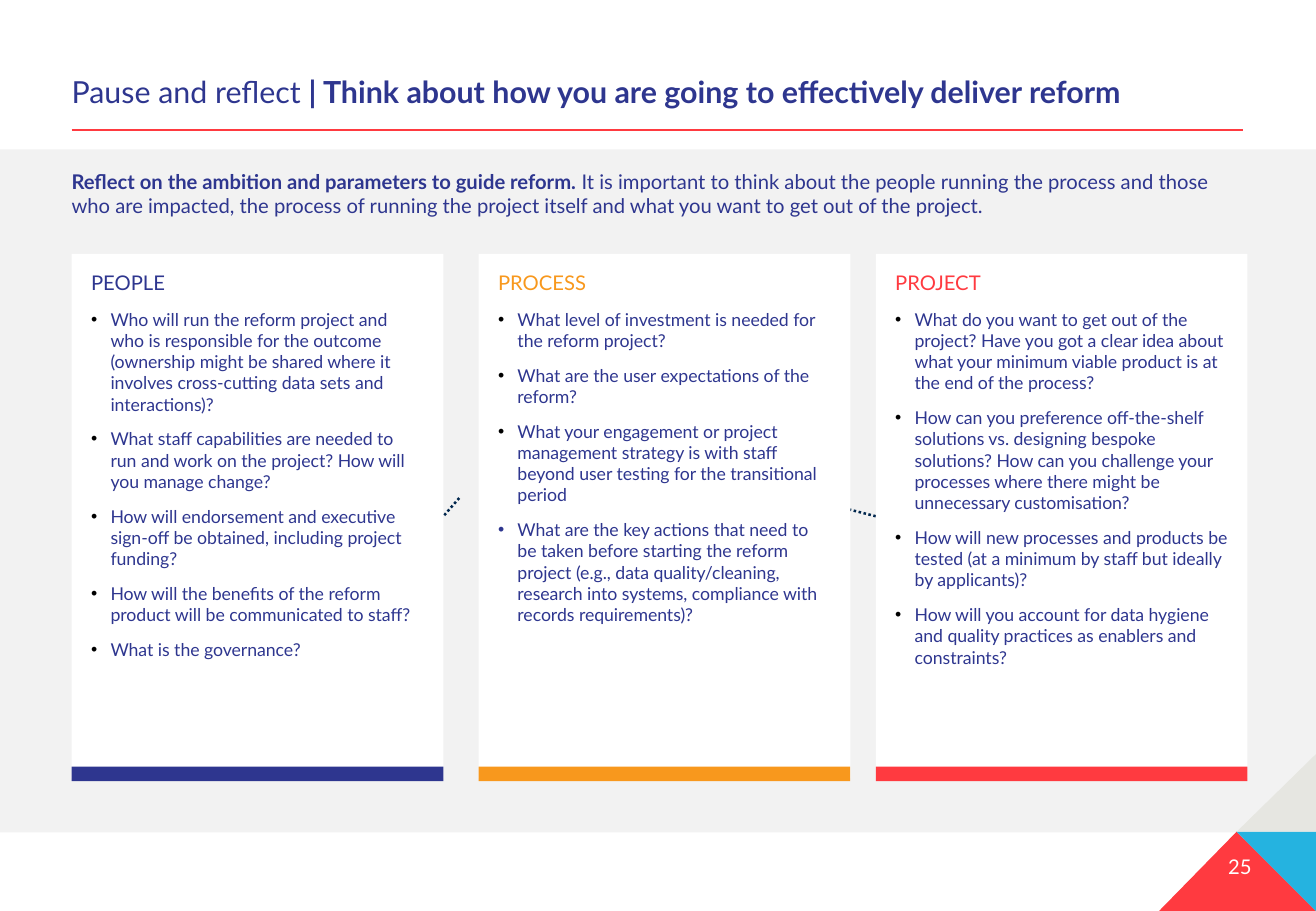
from lxml import etree
from pptx import Presentation
from pptx.dml.color import RGBColor
from pptx.enum.dml import MSO_LINE
from pptx.enum.shapes import MSO_CONNECTOR, MSO_SHAPE
from pptx.enum.text import MSO_ANCHOR, MSO_AUTO_SIZE, PP_ALIGN
from pptx.oxml.ns import qn
from pptx.util import Pt

RECT, LINE, DOTS = MSO_SHAPE.RECTANGLE, MSO_CONNECTOR.STRAIGHT, MSO_LINE.ROUND_DOT
TOP, MID, LOW = MSO_ANCHOR.TOP, MSO_ANCHOR.MIDDLE, MSO_ANCHOR.BOTTOM
LEFT, RIGHT = PP_ALIGN.LEFT, PP_ALIGN.RIGHT
FIXED = MSO_AUTO_SIZE.NONE
WIDE, HIGH = 780, 540
FONT = "Lato"
NAVY, GOLD, RED, SKY = "2E368F", "F8981D", "FF3A40", "25B3E0"
WHITE, BLACK, PALE, STONE, INK = "FFFFFF", "000000", "F2F2F2", "E6E6E1", "00264D"

# left edge, colour, heading, list, colours of the bullets
CARDS = [
    (42.5, NAVY, "PEOPLE", [
        "Who will run the reform project and who is responsible for the outcome (ownership might be shared where it involves cross-cutting data sets and interactions)?",
        "What staff capabilities are needed to run and work on the project? How will you manage change?",
        "How will endorsement and executive sign-off be obtained, including project funding?",
        "How will the benefits of the reform product will be communicated to staff?",
        "What is the governance?",
    ], [BLACK] * 5),
    (283.7, GOLD, "PROCESS", [
        "What level of investment is needed for the reform project?",
        "What are the user expectations of the reform?",
        "What your engagement or project management strategy is with staff beyond user testing for the transitional period",
        "What are the key actions that need to be taken before starting the reform project (e.g., data quality/cleaning, research into systems, compliance with records requirements)?",
    ], [BLACK] * 3 + [NAVY]),
    (519.1, RED, "PROJECT", [
        "What do you want to get out of the project? Have you got a clear idea about what your minimum viable product is at the end of the process?",
        "How can you preference off-the-shelf solutions vs. designing bespoke solutions? How can you challenge your processes where there might be unnecessary customisation?",
        "How will new processes and products be tested (at a minimum by staff but ideally by applicants)?",
        "How will you account for data hygiene and quality practices as enablers and constraints?",
    ], [BLACK] * 4),
]


def tint(code):
    return RGBColor.from_string(code)


def paint(shape, code):
    shape.shadow.inherit = False
    shape.fill.solid()
    shape.fill.fore_color.rgb = tint(code)
    shape.line.fill.background()


def block(slide, box, code):
    paint(slide.shapes.add_shape(RECT, *map(Pt, box)), code)


def facet(slide, points, code):
    path = slide.shapes.build_freeform(*points[0], scale=Pt(1))
    path.add_line_segments(points[1:], close=True)
    paint(path.convert_to_shape(), code)


def rule(slide, ends, code, width, dash=None):
    line = slide.shapes.add_connector(LINE, *map(Pt, ends))
    line.line.color.rgb = tint(code)
    line.line.width = Pt(width)
    if dash:
        line.line.dash_style = dash
    etree.SubElement(line._element.spPr, qn("a:effectLst"))


def setup(shape, box, pad, anchor):
    """Place a text shape and return its frame; pad is left, top, right, bottom."""
    shape.left, shape.top, shape.width, shape.height = map(Pt, box)
    frame = shape.text_frame
    frame.word_wrap, frame.auto_size = True, FIXED
    frame.vertical_anchor = anchor
    (frame.margin_left, frame.margin_top,
     frame.margin_right, frame.margin_bottom) = map(Pt, pad)
    return frame


def raise_up(slide, holder):
    slide.shapes._spTree.append(holder._element)


def write(frame, *runs, size=12, code=NAVY, align=LEFT, before=0, after=0,
          lines=1.0, dot=None):
    """Add a paragraph of (text, bold) runs; dot is the colour of its bullet."""
    para = frame.paragraphs[0]
    if para.runs:
        para = frame.add_paragraph()
    props = para._p.get_or_add_pPr()
    props.set("marL", str(Pt(11.5) if dot else 0))
    props.set("indent", str(-Pt(11.5) if dot else 0))
    if dot:
        hue = etree.SubElement(props, qn("a:buClr"))
        etree.SubElement(hue, qn("a:srgbClr"), val=dot)
        etree.SubElement(props, qn("a:buChar"), char="•")
    else:
        etree.SubElement(props, qn("a:buNone"))
    para.alignment, para.line_spacing = align, lines
    para.space_before, para.space_after = Pt(before), Pt(after)
    for text, bold in runs:
        run = para.add_run()
        run.text = text
        font = run.font
        font.name, font.size, font.bold = FONT, Pt(size), bold
        font.color.rgb = tint(code)


def corner(slide, side):
    """Draw the facets and page number in the lower right, side points wide."""
    x, y = WIDE - side, HIGH - side
    facet(slide, [(x, y), (x - side, HIGH), (WIDE, HIGH)], RED)
    facet(slide, [(WIDE, y), (x, y), (WIDE, HIGH)], SKY)
    facet(slide, [(WIDE, y - side), (x, y), (WIDE, y)], STONE)
    page = slide.shapes.add_textbox(0, 0, 0, 0)
    frame = setup(page, (x - 54, y + 9.5, 62.5, 21.5), (0, 3.6, 0, 3.6), MID)
    write(frame, ("25", False), code=WHITE, align=RIGHT)


def header(slide, box):
    x, y, w, h = box
    title = slide.shapes.title
    frame = setup(title, box, (0, 3.6, 0, 3.6), LOW)
    write(frame, ("Pause and reflect ", False),
          ("| Think about how you are going to effectively deliver reform", True),
          size=18, lines=0.9)
    rule(slide, (x, y + 34.5, x + w, y + 34.5), RED, 1.25)


def intro(slide, holder, box):
    raise_up(slide, holder)
    frame = setup(holder, box, (7.2, 3.6, 7.2, 3.6), MID)
    write(frame, ("Reflect on the ambition and parameters to guide reform. ", True),
          ("It is important to think about the people running the process and those who are impacted, the process of running the project itself and what you want to get out of the project.", False))


def card(slide, holder, box, code, head, items, dots):
    x, y, w, h = box
    raise_up(slide, holder)
    holder.fill.solid()
    holder.fill.fore_color.rgb = tint(WHITE)
    frame = setup(holder, box, (11.5, 10, 11.5, 11.5), TOP)
    write(frame, (head, False), code=code, after=6)
    for item, dot in zip(items, dots):
        write(frame, (item, False), size=10.5, before=2, after=6, dot=dot)
    block(slide, (x, y + h - 7, w, 8.5), code)


def main():
    deck = Presentation()
    deck.slide_width, deck.slide_height = Pt(WIDE), Pt(HIGH)
    slide = deck.slides.add_slide(deck.slide_layouts[4])
    lead, *lists = [p for p in slide.placeholders if p != slide.shapes.title][:4]
    block(slide, (0, 88.5, WIDE, 405), PALE)
    corner(slide, 46.7)
    header(slide, (42.5, 42.5, 694, 26.5))
    raise_up(slide, slide.shapes.title)
    intro(slide, lead, (35.2, 95, 704, 39.6))
    rule(slide, (272.2, 295.2, 262.8, 306), INK, 1.5, DOTS)
    rule(slide, (519.1, 306, 476.6, 295.2), INK, 1.5, DOTS)
    for holder, (x, *parts) in zip(lists, CARDS):
        card(slide, holder, (x, 150.5, 220.3, 311), *parts)
    deck.save("out.pptx")


if __name__ == "__main__":
    main()
